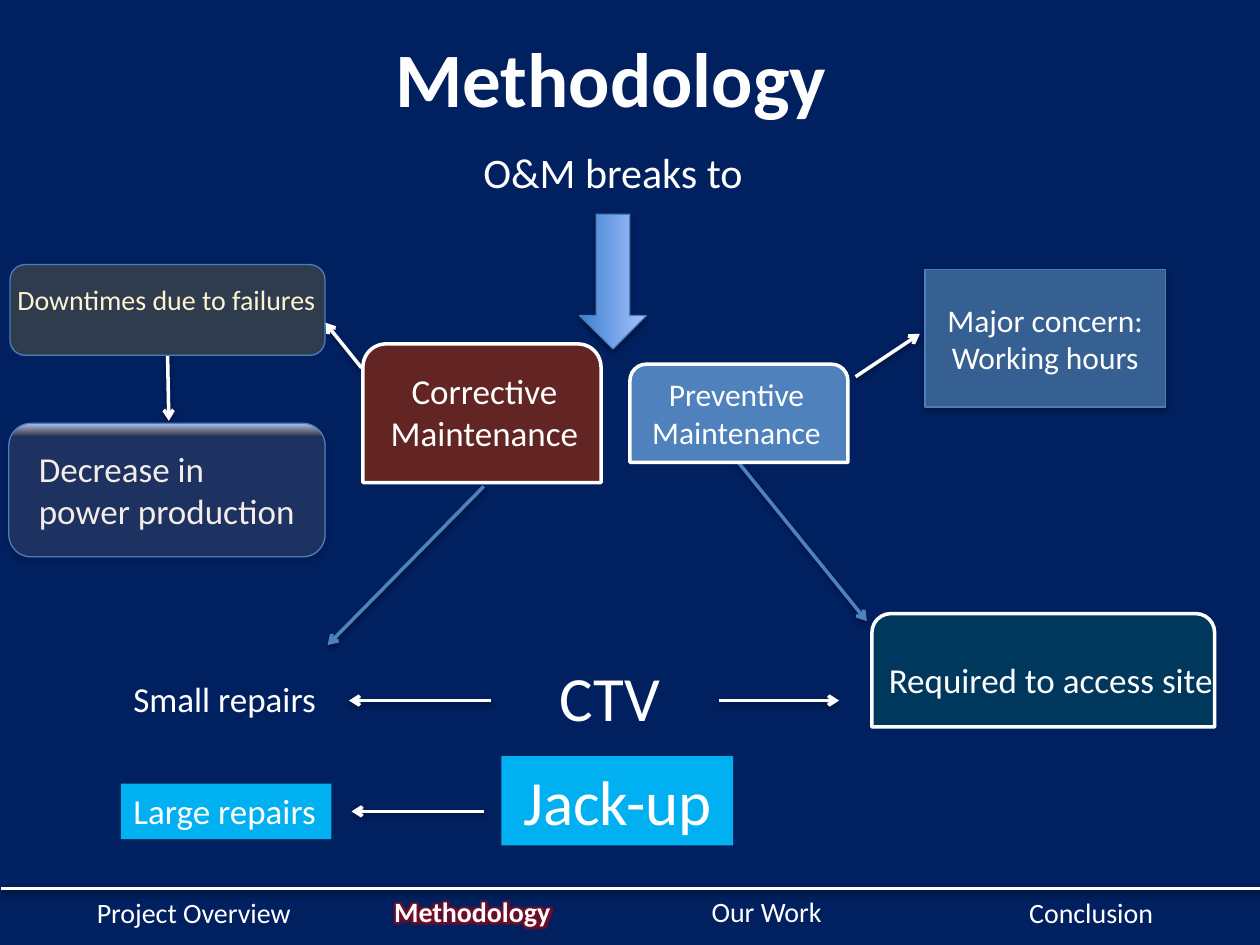
from lxml.etree import SubElement
from pptx import Presentation
from pptx.dml.color import RGBColor
from pptx.enum.shapes import MSO_CONNECTOR, MSO_SHAPE as Shape
from pptx.enum.text import MSO_ANCHOR as Anchor, MSO_AUTO_SIZE as Fit, PP_ALIGN as Align
from pptx.oxml import parse_xml
from pptx.oxml.ns import nsdecls, qn
from pptx.util import Inches, Pt

THEME = dict(
    font="Calibri", navy="002060", white="FFFFFF", blue="4F81BD", edge="4B7EBC",
    pale="A4C4FF", steel="376092", maroon="632523", cyan="00B0F0", green="00B050",
    amber="FFC000", peach="FAC090", arrow="3F80CE", glow="C00000",
    title=44, vessel=36, lead=24, label=20, detail=18, small=16,
)
WIDTH, HEIGHT = 10, 7.5
UP = 270

# Content: (text, (left, top, width, height), size, alignment, wrap)
UNDER_LABELS = [
    ("Downtimes due to failures", (0.04, 2.19, 2.58, 0.37), "small", Align.LEFT, False),
    ("Decrease in power production", (0.21, 3.5, 2.25, 0.77), "label", Align.LEFT, True),
]
LABELS = [
    ("O&M breaks to", (3.71, 1.11, 2.31, 0.5), "lead", Align.CENTER, False),
    ("Preventive Maintenance", (4.97, 2.93, 1.75, 0.71), "detail", Align.CENTER, True),
    ("Corrective Maintenance", (2.94, 2.88, 1.81, 0.77), "label", Align.CENTER, True),
    ("Required to access site", (6.94, 5.18, 2.8, 0.44), "label", Align.CENTER, False),
]
# (preset, box, gradient or solid stops (position, colour, opacity), line, width, shadow)
PANELS = [
    (Shape.ROUND_2_SAME_RECTANGLE, (5, 2.89, 1.73, 0.78), [(0, "blue", 100)], "white", 2, False),
    (Shape.ROUND_2_SAME_RECTANGLE, (2.88, 2.73, 1.89, 1.1), [(0, "maroon", 100)], "white", 2, False),
    (Shape.ROUND_2_SAME_RECTANGLE, (6.92, 4.87, 2.72, 0.9), [(0, "green", 17)], "white", 2, False),
    (Shape.ROUNDED_RECTANGLE, (0.08, 2.1, 2.5, 0.72), [(0, "amber", 18)], "edge", 0.75, False),
    (Shape.ROUNDED_RECTANGLE, (0.07, 3.36, 2.51, 1.06),
     [(0, "peach", 12), (90, "peach", 12), (100, "pale", 100)], "edge", 0.75, True),
]
CONCERN = ("Major concern:\nWorking hours", (7.34, 2.14, 1.91, 1.09))
# (text, box, fill, size, alignment, wrap)
BLOCKS = [
    ("Small repairs", (0.96, 5.33, 1.67, 0.44), "navy", "label", Align.LEFT, False),
    ("Large repairs", (0.96, 6.22, 1.67, 0.44), "cyan", "label", Align.LEFT, False),
    ("CTV", (4.12, 5.18, 1.44, 0.71), "navy", "vessel", Align.CENTER, True),
    ("Jack-up", (3.98, 6, 1.84, 0.71), "cyan", "vessel", Align.CENTER, True),
]
# (from, to, colour)
ARROWS = [
    ((1.33, 2.82), (1.34, 3.34), "white"),
    ((2.87, 2.92), (2.58, 2.56), "white"),
    ((6.79, 2.99), (7.3, 2.65), "white"),
    ((3.9, 5.56), (2.77, 5.56), "white"),
    ((5.71, 5.56), (6.66, 5.56), "white"),
    ((3.84, 6.44), (2.79, 6.44), "white"),
    ((5.86, 3.67), (6.88, 4.93), "blue"),
    ((3.84, 3.86), (2.6, 5.12), "blue"),
]
SECTIONS = [("Project Overview", 0.67, 7.06), ("Methodology", 3.03, 7.05),
            ("Our Work", 5.55, 7.05), ("Conclusion", 8.07, 7.06)]
CURRENT = "Methodology"


def rgb(name):
    return RGBColor.from_string(THEME[name])


def inches(values):
    return [Inches(value) for value in values]


def write(shape, text, size, align, wrap=True, anchor=Anchor.TOP, bold=False):
    frame = shape.text_frame
    frame.text = text
    frame.word_wrap, frame.auto_size, frame.vertical_anchor = wrap, Fit.NONE, anchor
    for paragraph in frame.paragraphs:
        paragraph.alignment = align
        for run in paragraph.runs:
            font = run.font
            font.size, font.bold, font.name = Pt(THEME[size]), bold, THEME["font"]
            font.color.rgb = rgb("white")


def cast_shadow(shape, opacity, distance):
    effects = shape._element.spPr.find(qn("a:effectLst"))
    if effects is None:
        effects = SubElement(shape._element.spPr, qn("a:effectLst"))
    effects.append(parse_xml(
        f'<a:outerShdw {nsdecls("a")} blurRad="{Pt(3.1)}" dist="{Pt(distance)}" '
        f'dir="5400000" rotWithShape="0"><a:srgbClr val="000000">'
        f'<a:alpha val="{opacity * 1000}"/></a:srgbClr></a:outerShdw>'))


def paint(shape, stops):
    """Solid fill for one stop, upward gradient for several."""
    colours = [f'<a:srgbClr val="{THEME[colour]}"><a:alpha val="{opacity * 1000}"/></a:srgbClr>'
               for _, colour, opacity in stops]
    if len(stops) == 1:
        fill = f'<a:solidFill {nsdecls("a")}>{colours[0]}</a:solidFill>'
    else:
        marks = "".join(f'<a:gs pos="{stop[0] * 1000}">{colour}</a:gs>'
                        for stop, colour in zip(stops, colours))
        fill = (f'<a:gradFill {nsdecls("a")} rotWithShape="1"><a:gsLst>{marks}</a:gsLst>'
                f'<a:lin ang="{UP * 60000}" scaled="0"/></a:gradFill>')
    shape._element.spPr.find(qn("a:prstGeom")).addnext(parse_xml(fill))


def add_panel(shapes, preset, box, stops, line=None, width=0, shadow=False):
    panel = shapes.add_shape(preset, *inches(box))
    panel.shadow.inherit = False
    paint(panel, stops)
    if line:
        panel.line.color.rgb, panel.line.width = rgb(line), Pt(width)
    else:
        panel.line.fill.background()
    if shadow:
        cast_shadow(panel, 35, 1.8)
    return panel


def add_label(shapes, text, box, size, align, wrap, bold=False):
    label = shapes.add_textbox(*inches(box))
    write(label, text, size, align, wrap, bold=bold)
    return label


def add_line(shapes, start, end, colour, head=True):
    line = shapes.add_connector(MSO_CONNECTOR.STRAIGHT, *inches(start + end))
    line.line.color.rgb, line.line.width = rgb(colour), Pt(2)
    if head:
        SubElement(line.line._get_or_add_ln(), qn("a:tailEnd"), type="arrow")
    cast_shadow(line, 38, 1.6)


def add_glow(run):
    run.font._element.find(qn("a:solidFill")).addnext(parse_xml(
        f'<a:effectLst {nsdecls("a")}><a:glow rad="{Pt(8)}"><a:srgbClr val="{THEME["glow"]}">'
        f'<a:alpha val="60000"/></a:srgbClr></a:glow></a:effectLst>'))


def main():
    deck = Presentation()
    deck.slide_width, deck.slide_height = inches((WIDTH, HEIGHT))
    slide = deck.slides.add_slide(deck.slide_layouts[5])
    slide.background.fill.solid()
    slide.background.fill.fore_color.rgb = rgb("navy")
    shapes = slide.shapes

    # Title
    title = shapes.title
    title.left, title.top, title.width, title.height = inches((0.35, 0.1, 9, 1.01))
    write(title, "Methodology", "title", Align.CENTER, anchor=Anchor.MIDDLE, bold=True)

    # Section bar
    for name, left, top in SECTIONS:
        current = name == CURRENT
        section = add_label(shapes, name, (left, top, 2.2, 0.37), "small", Align.LEFT, True, current)
        if current:
            add_glow(section.text_frame.paragraphs[0].runs[0])
    add_line(shapes, (0.01, 7.05), (10.01, 7.05), "white", head=False)

    # Maintenance types, with tinted panels over two of the labels
    for label in UNDER_LABELS:
        add_label(shapes, *label)
    down = add_panel(shapes, Shape.RIGHT_ARROW, (4.33, 1.97, 1.07, 0.53),
                     [(0, "arrow", 100), (100, "pale", 100)], "edge", 0.75, True)
    down.rotation = 90
    for arrow in ARROWS:
        add_line(shapes, *arrow)
    for panel in PANELS:
        add_panel(shapes, *panel)
    for label in LABELS:
        add_label(shapes, *label)
    text, box = CONCERN
    concern = add_panel(shapes, Shape.FLOWCHART_PROCESS, box, [(0, "steel", 100)], "edge", 0.75, True)
    write(concern, text, "detail", Align.CENTER, anchor=Anchor.MIDDLE)

    # Vessels and repairs
    for text, box, fill, size, align, wrap in BLOCKS:
        block = add_panel(shapes, Shape.RECTANGLE, box, [(0, fill, 100)])
        write(block, text, size, align, wrap)

    deck.save("out.pptx")


if __name__ == "__main__":
    main()
